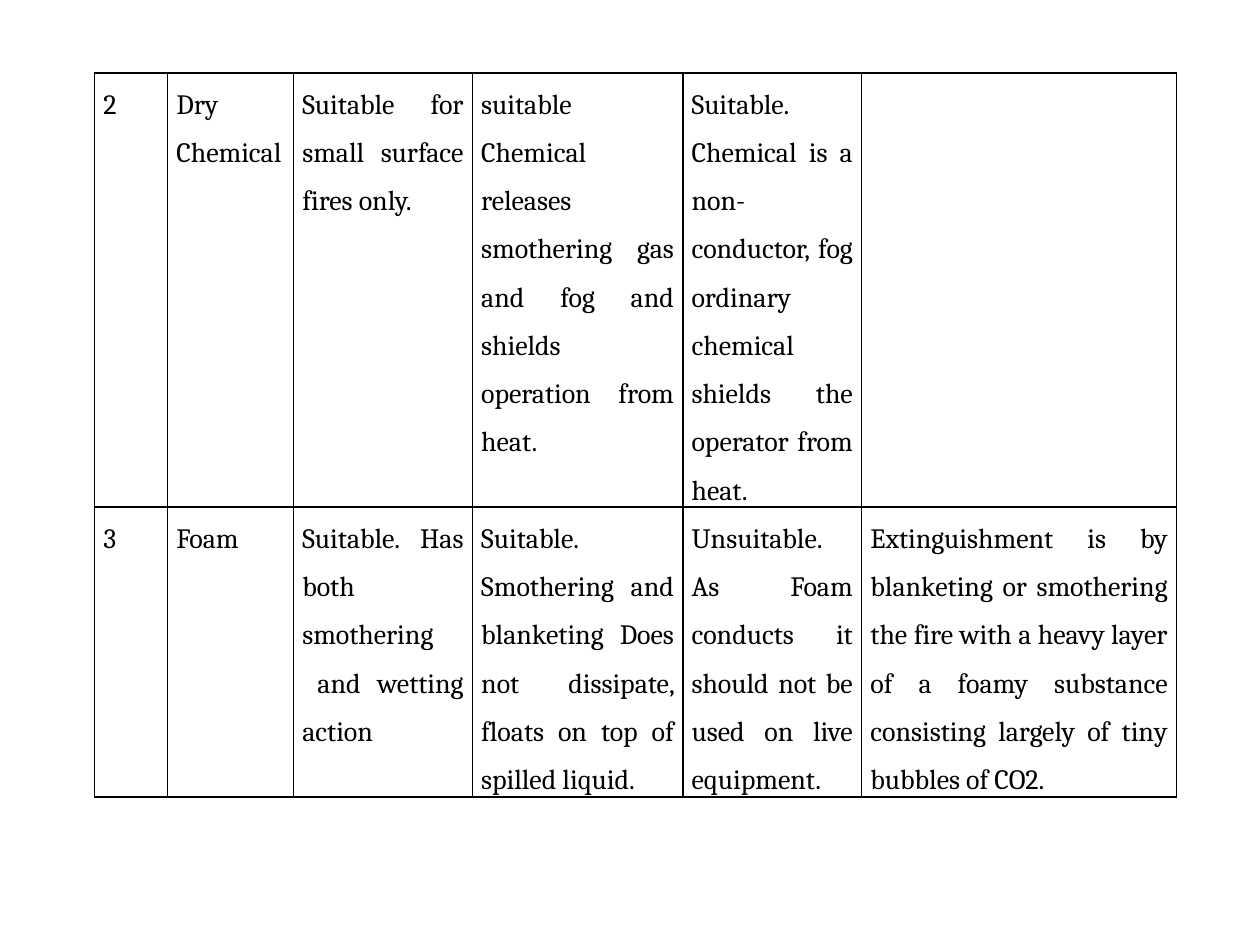
import pptx
import pptx.util
import pptx.dml.color
import pptx.enum.text
import pptx.oxml
import pptx.oxml.ns
from pptx.util import Inches

BLACK = pptx.dml.color.RGBColor(0, 0, 0)
WHITE = pptx.dml.color.RGBColor(255, 255, 255)

WIDTHS = [0.58, 1, 1.42, 1.67, 1.42, 2.5]
HEIGHTS = [3.44, 2.3]
ROWS = [
    ["2", "Dry Chemical", "Suitable for small surface fires only.",
     "suitable Chemical releases smothering gas and fog and shields "
     "operation from heat.",
     "Suitable. Chemical is a non-conductor, fog ordinary chemical "
     "shields the operator from heat.",
     ""],
    ["3", "Foam", "Suitable. Has both smothering\nand wetting action",
     "Suitable. Smothering and blanketing Does not dissipate, floats on "
     "top of spilled liquid.",
     "Unsuitable. As Foam conducts it should not be used on live equipment.",
     "Extinguishment is by blanketing or smothering the fire with a heavy "
     "layer of a foamy substance consisting largely of tiny bubbles of CO2."],
]


def add_borders(cell):
    props = cell._tc.get_or_add_tcPr()
    for place, side in enumerate(["lnL", "lnR", "lnT", "lnB"]):
        line = pptx.oxml.parse_xml(
            f'<a:{side} {pptx.oxml.ns.nsdecls("a")} w="{pptx.util.Pt(1)}">'
            f'<a:solidFill><a:srgbClr val="{BLACK}"/></a:solidFill></a:{side}>')
        props.insert(place, line)


deck = pptx.Presentation()
deck.slide_width = Inches(10)
deck.slide_height = Inches(7.5)
slide = deck.slides.add_slide(deck.slide_layouts[6])

frame = slide.shapes.add_table(
    len(ROWS), len(WIDTHS), Inches(0.75), Inches(0.58),
    Inches(sum(WIDTHS)), Inches(sum(HEIGHTS)))
table = frame.table
table.first_row = False
table.horz_banding = False
for column, width in zip(table.columns, WIDTHS):
    column.width = Inches(width)
for row, height in zip(table.rows, HEIGHTS):
    row.height = Inches(height)

for row, texts in zip(table.rows, ROWS):
    for cell, text in zip(row.cells, texts):
        cell.fill.solid()
        cell.fill.fore_color.rgb = WHITE
        add_borders(cell)
        cell.margin_left = cell.margin_right = Inches(0.07)
        cell.margin_top = cell.margin_bottom = 0
        cell.text_frame.text = text
        for number, para in enumerate(cell.text_frame.paragraphs):
            para.alignment = pptx.enum.text.PP_ALIGN.JUSTIFY
            para.line_spacing = 1.5
            if number:
                para._p.get_or_add_pPr().set("indent", str(Inches(0.12)))
            for run in para.runs:
                run.font.name = "Cambria"
                run.font.size = pptx.util.Pt(16)
                run.font.color.rgb = BLACK

deck.save("out.pptx")
